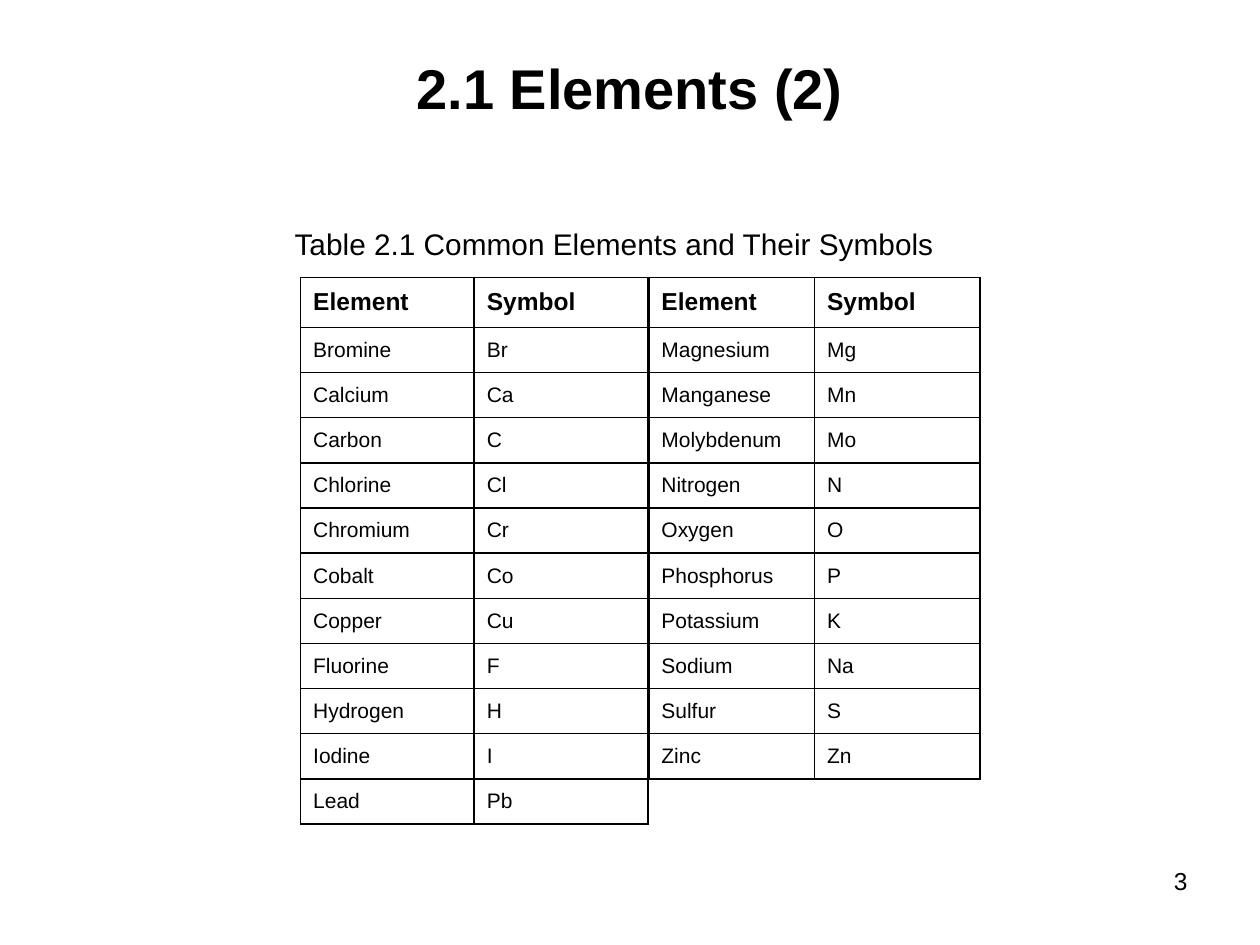
from lxml.etree import SubElement
from pptx import Presentation
from pptx.dml.color import RGBColor
from pptx.enum.text import MSO_ANCHOR, PP_ALIGN
from pptx.oxml.ns import qn
from pptx.util import Cm, Pt

BLACK = RGBColor(0, 0, 0)


def format_text(tf, size, bold=False, align=PP_ALIGN.LEFT):
    p = tf.paragraphs[0]
    p.alignment = align
    r = p.runs[0]
    r.font.name = "Arial"
    r.font.size = Pt(size)
    r.font.bold = bold
    r.font.color.rgb = BLACK


def add_borders(cell):
    tcPr = cell._tc.get_or_add_tcPr()
    for i, side in enumerate(("lnL", "lnR", "lnT", "lnB")):
        ln = tcPr.makeelement(qn(f"a:{side}"), {"w": str(Pt(1))})
        fill = SubElement(ln, qn("a:solidFill"))
        SubElement(fill, qn("a:srgbClr"), val=str(BLACK))
        tcPr.insert(i, ln)


prs = Presentation()
prs.slide_width = Cm(25.4)
prs.slide_height = Cm(19.05)
s = prs.slides.add_slide(prs.slide_layouts[6])

texts = [
    ("2.1 Elements (2)", 1.83, 0.56, 21.74, 2.41, 32, True, PP_ALIGN.CENTER),
    ("Table 2.1 Common Elements and Their Symbols", 5.69, 4.5, 14.27, 0.84, 17, False, PP_ALIGN.LEFT),
    ("3", 20.35, 17.32, 3.84, 0.86, 14, False, PP_ALIGN.RIGHT),
]
for text, left, top, width, height, size, bold, align in texts:
    sp = s.shapes.add_textbox(Cm(left), Cm(top), Cm(width), Cm(height))
    tf = sp.text_frame
    tf.word_wrap = True
    tf.vertical_anchor = MSO_ANCHOR.MIDDLE
    tf.text = text
    format_text(tf, size, bold, align)

header = ("Element", "Symbol")
left_elements = [
    header, ("Bromine", "Br"), ("Calcium", "Ca"), ("Carbon", "C"),
    ("Chlorine", "Cl"), ("Chromium", "Cr"), ("Cobalt", "Co"), ("Copper", "Cu"),
    ("Fluorine", "F"), ("Hydrogen", "H"), ("Iodine", "I"), ("Lead", "Pb"),
]
right_elements = [
    header, ("Magnesium", "Mg"), ("Manganese", "Mn"), ("Molybdenum", "Mo"),
    ("Nitrogen", "N"), ("Oxygen", "O"), ("Phosphorus", "P"), ("Potassium", "K"),
    ("Sodium", "Na"), ("Sulfur", "S"), ("Zinc", "Zn"),
]
header_height, row_height = 1.01, 0.91

for elements, left, col_width in ((left_elements, 6.06, 3.5), (right_elements, 13.08, 3.34)):
    height = header_height + row_height * (len(elements) - 1)
    frame = s.shapes.add_table(len(elements), 2, Cm(left), Cm(5.59), Cm(2 * col_width), Cm(height))
    table = frame.table
    table.horz_banding = False
    table.first_row = False
    for col in table.columns:
        col.width = Cm(col_width)
    for i, values in enumerate(elements):
        table.rows[i].height = Cm(row_height if i else header_height)
        for j, value in enumerate(values):
            cell = table.cell(i, j)
            cell.fill.background()
            cell.vertical_anchor = MSO_ANCHOR.MIDDLE
            cell.text_frame.text = value
            format_text(cell.text_frame, 12 if i else 14, i == 0)
            add_borders(cell)

prs.save("out.pptx")
